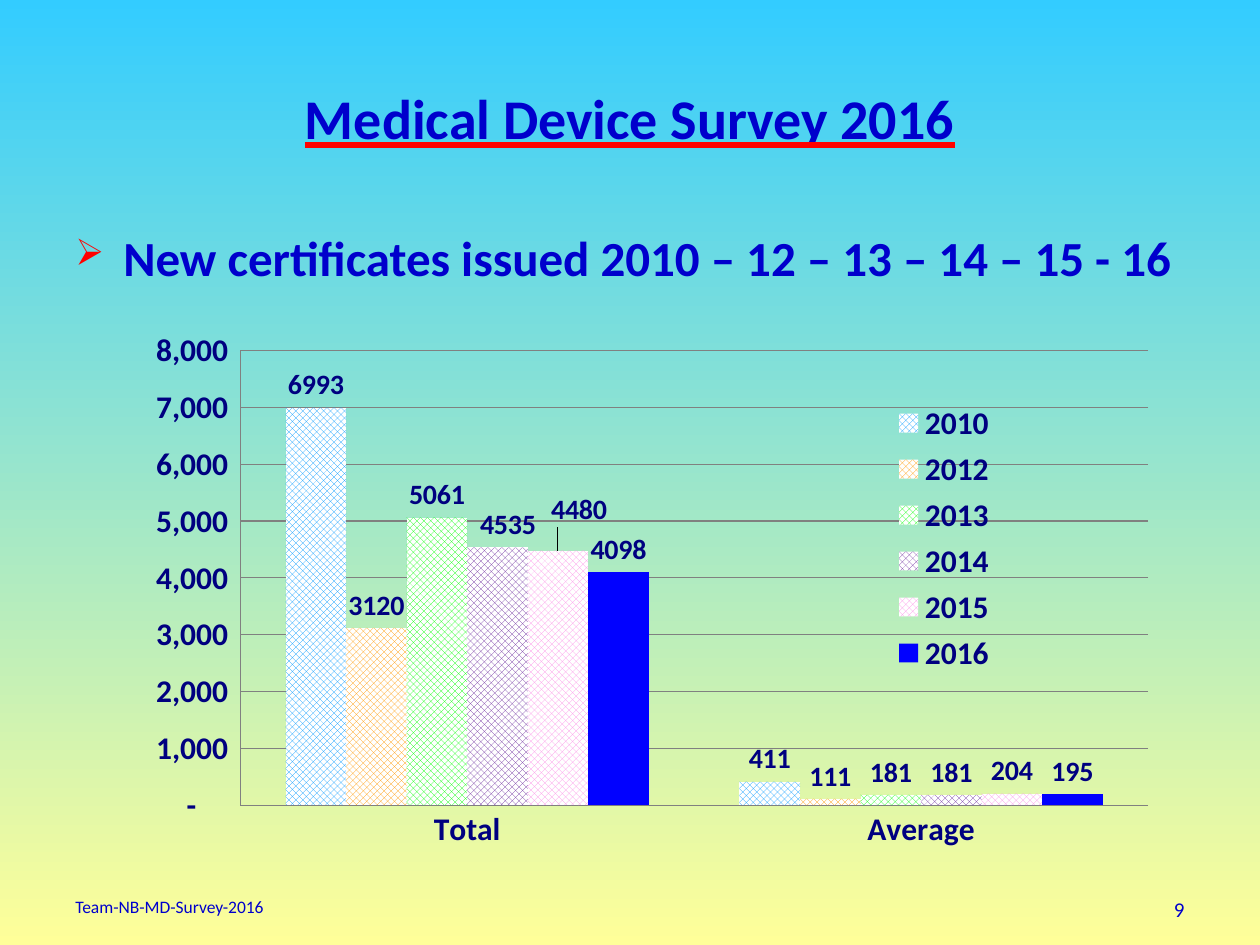
import pptx
import pptx.chart.data
import pptx.dml.color
import pptx.enum.chart
import pptx.enum.dml
import pptx.enum.text
import pptx.oxml
import pptx.oxml.ns
import pptx.util

RGB = pptx.dml.color.RGBColor
SKY = RGB(0x33, 0xCC, 0xFF)
PALE_YELLOW = RGB(0xFF, 0xFF, 0x99)
BLUE = RGB(0x00, 0x00, 0xCC)
NAVY = RGB(0x00, 0x00, 0x80)
RED = RGB(0xFF, 0x00, 0x00)
WHITE = RGB(0xFF, 0xFF, 0xFF)
GREY = RGB(0x80, 0x80, 0x80)
SOLID_BLUE = RGB(0x01, 0x01, 0xFF)

ALIGN = pptx.enum.text.PP_ALIGN
ANCHOR = pptx.enum.text.MSO_ANCHOR
ACCOUNTING = r'_(* #,##0_);_(* \(#,##0\);_(* "-"??_);_(@_)'

# year, (total, average), pattern colour (None for a solid bar)
CERTIFICATES = [
    ("2010", (6993, 411), RGB(0x00, 0x99, 0xFF)),
    ("2012", (3120, 111), RGB(0xFF, 0x99, 0x00)),
    ("2013", (5061, 181), RGB(0x00, 0xFF, 0x00)),
    ("2014", (4535, 181), RGB(0x70, 0x30, 0xA0)),
    ("2015", (4480, 204), RGB(0xFD, 0x91, 0xE8)),
    ("2016", (4098, 195), None),
]
LABEL_SHIFTS = {"2014": (0.01, 0), "2015": (0.02, -0.03)}


def px(length):
    return pptx.util.Emu(round(length * 914400 / 126))


def xml(tag, content="", attributes=""):
    """Make an element from a prefixed tag such as a:uFill."""
    namespaces = pptx.oxml.ns.nsdecls("a", "c")
    return pptx.oxml.parse_xml(f"<{tag} {namespaces} {attributes}>{content}</{tag}>")


def rgb_xml(color):
    return f'<a:srgbClr val="{color}"/>'


def manual_layout(**values):
    """Make a chart layout; inner=True measures the plot without its axis labels."""
    target = '<c:layoutTarget val="inner"/>' if values.pop("inner", False) else ""
    modes = "".join(f'<c:{k}Mode val="edge"/>' for k in "xy" if "w" in values)
    places = "".join(f'<c:{k} val="{v}"/>' for k, v in values.items())
    return xml("c:layout", f"<c:manualLayout>{target}{modes}{places}</c:manualLayout>")


class SurveySlide:
    font_name = "Calibri"

    def __init__(self, slide):
        self.slide = slide

    def style(self, font, size, color, bold=False):
        font.name, font.size, font.bold = self.font_name, pptx.util.Pt(size), bold
        font.color.rgb = color

    def background(self, top, bottom):
        fill = self.slide.background.fill
        fill.gradient()
        fill.gradient_angle = 270
        for stop, color, position in zip(fill.gradient_stops, (top, bottom), (0, 1)):
            stop.color.rgb, stop.position = color, position

    def text(self, words, left, top, width, height, *, size, bold=False,
             align=ALIGN.LEFT, anchor=ANCHOR.TOP, underline=None, bullet=None):
        box = self.slide.shapes.add_textbox(px(left), px(top), px(width), px(height))
        frame = box.text_frame
        frame.word_wrap, frame.vertical_anchor = True, anchor
        paragraph = frame.paragraphs[0]
        paragraph.alignment = align
        if bullet:
            self.bullet(paragraph, bullet)
        run = paragraph.add_run()
        run.text = words
        self.style(run.font, size, BLUE, bold)
        if underline:
            run.font.underline = True
            fill = f"<a:solidFill>{rgb_xml(underline)}</a:solidFill>"
            latin = run.font._element.find(pptx.oxml.ns.qn("a:latin"))
            latin.addprevious(xml("a:uFill", fill))

    def bullet(self, paragraph, mark):
        properties = paragraph._p.get_or_add_pPr()
        indent = px(48)
        properties.set("marL", str(indent))
        properties.set("indent", str(-indent))
        properties.append(xml("a:buClr", rgb_xml(RED)))
        properties.append(xml("a:buSzPct", attributes='val="75000"'))
        properties.append(xml("a:buChar", attributes=f'char="{mark}"'))

    def column_chart(self, categories, records, left, top, width, height):
        data = pptx.chart.data.CategoryChartData()
        data.categories = categories
        for year, values, _ in records:
            data.add_series(year, values)
        chart = self.slide.shapes.add_chart(
            pptx.enum.chart.XL_CHART_TYPE.COLUMN_CLUSTERED,
            px(left), px(top), px(width), px(height), data).chart
        chart.has_title = False
        self.style(chart.font, 18, NAVY, True)
        plot = chart.plots[0]
        plot.gap_width, plot.overlap, plot.vary_by_categories = 150, 0, False
        for series, (year, _, color) in zip(plot.series, records):
            self.bars(series, color)
            self.value_labels(series, LABEL_SHIFTS.get(year))
        self.axes(chart)
        self.legend(chart)
        area = chart._chartSpace.chart.plotArea
        for old in area.findall(pptx.oxml.ns.qn("c:layout")):
            area.remove(old)
        area.insert(0, manual_layout(inner=True, x=0.101, y=0.176, w=0.863, h=0.737))

    def bars(self, series, color):
        series.invert_if_negative = False
        fill = series.format.fill
        if color is None:
            fill.solid()
            fill.fore_color.rgb = SOLID_BLUE
        else:
            fill.patterned()
            fill.pattern = pptx.enum.dml.MSO_PATTERN.LARGE_CHECKER_BOARD
            fill.fore_color.rgb, fill.back_color.rgb = color, WHITE
        series.format.line.fill.background()

    def value_labels(self, series, first_shift):
        """Show values above the bars, with the first label moved if asked."""
        outside = pptx.enum.chart.XL_LABEL_POSITION.OUTSIDE_END
        labels = series.data_labels
        labels.show_value, labels.position = True, outside
        labels.number_format, labels.number_format_is_linked = "0", False
        self.style(labels.font, 16, NAVY, True)
        if first_shift:
            first = series.points[0].data_label
            first.position = outside
            self.style(first.font, 16, NAVY, True)
            x, y = first_shift
            index = series._element.xpath("c:dLbls/c:dLbl/c:idx")[0]
            index.addnext(manual_layout(x=x, y=y))

    def axes(self, chart):
        values = chart.value_axis
        values.minimum_scale, values.maximum_scale, values.major_unit = 0, 8000, 1000
        values.tick_labels.number_format = ACCOUNTING
        values.tick_labels.number_format_is_linked = False
        values.has_major_gridlines = True
        lines = [values.major_gridlines.format.line]
        for axis in (values, chart.category_axis):
            axis.major_tick_mark = pptx.enum.chart.XL_TICK_MARK.NONE
            self.style(axis.tick_labels.font, 18, NAVY, True)
            lines.append(axis.format.line)
        for line in lines:
            line.color.rgb, line.width = GREY, pptx.util.Pt(0.75)

    def legend(self, chart):
        chart.has_legend = True
        legend = chart.legend
        legend.position = pptx.enum.chart.XL_LEGEND_POSITION.RIGHT
        legend.include_in_layout = False
        self.style(legend.font, 18, NAVY, True)
        position = legend._element.find(pptx.oxml.ns.qn("c:legendPos"))
        position.addnext(manual_layout(x=0.72, y=0.25, w=0.1, h=0.46))


def main():
    deck = pptx.Presentation()
    deck.slide_width, deck.slide_height = px(1260), px(945)
    survey = SurveySlide(deck.slides.add_slide(deck.slide_layouts[6]))
    survey.background(SKY, PALE_YELLOW)
    survey.text("Medical Device Survey 2016", 63, 38, 1134, 158, size=32, bold=True,
                align=ALIGN.CENTER, anchor=ANCHOR.MIDDLE, underline=RED)
    survey.text("9", 903, 890, 294, 37, size=12, align=ALIGN.RIGHT)
    survey.text("New certificates issued 2010 – 12 – 13 – 14 – 15 - 16",
                63, 221, 1134, 103, size=28, bold=True, bullet="➢")
    survey.text("Team-NB-MD-Survey-2016", 63, 890, 399, 37, size=10)
    survey.column_chart(["Total", "Average"], CERTIFICATES, 134, 242, 1052, 617)
    deck.save("out.pptx")


if __name__ == "__main__":
    main()
